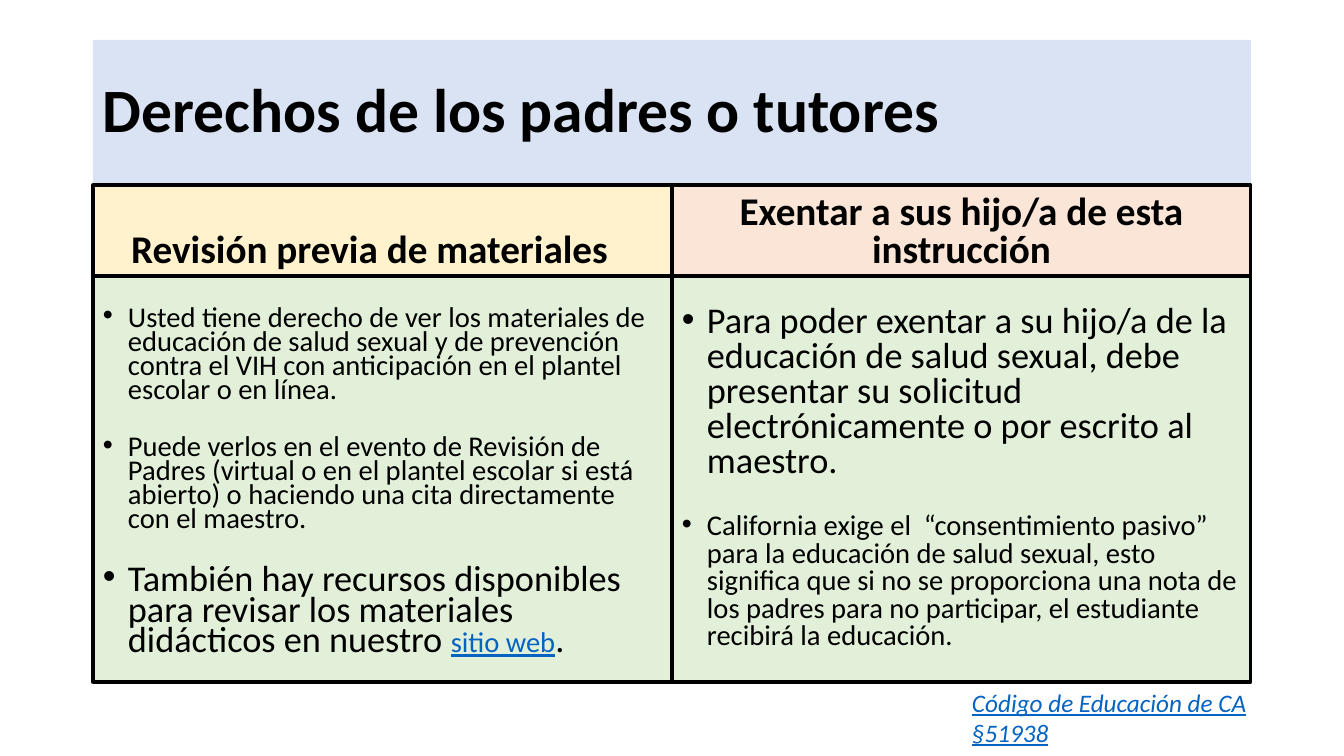
from pptx import Presentation
from pptx import util as u
from pptx.dml.color import RGBColor
from pptx.enum import shapes, text
from pptx.oxml.ns import qn
from lxml import etree

THEME = {
    "font": "Calibri", "ink": "000000", "link": "0563C1",
    "title_fill": "DAE3F3", "body_fill": "E2F0D9",
    "title": 44, "heading": 28, "large": 25.9, "small": 20.4, "note": 18,
    "border": 2.25,
}

TITLE = "Derechos de los padres o tutores"
# Each bullet: runs of (text, size name, is link), space before, space after
COLUMNS = [
    {
        "heading": "Revisión previa de materiales",
        "fill": "FFF2CC", "heading_spacing": 1.0, "right_inset": 36,
        "spacing": 0.7, "top_inset": 32,
        "bullets": [
            ([("Usted tiene derecho de ver los materiales de educación de salud "
               "sexual y de prevención contra el VIH con anticipación en el "
               "plantel escolar o en línea.", "small", False)], 0, 0),
            ([("Puede verlos en el evento de Revisión de Padres (virtual o en el "
               "plantel escolar si está abierto) o haciendo una cita "
               "directamente con el maestro.", "small", False)], 24, 0),
            ([("También hay recursos disponibles para revisar los materiales "
               "didácticos en nuestro ", "large", False),
              ("sitio web", "small", True), (".", "large", False)], 24, 0),
        ],
    },
    {
        "heading": "Exentar a sus hijo/a de esta instrucción",
        "fill": "FBE5D6", "heading_spacing": 0.8, "right_inset": 10,
        "spacing": 0.8, "top_inset": 30,
        "bullets": [
            ([("Para poder exentar a su hijo/a de la educación de salud sexual, "
               "debe presentar su solicitud electrónicamente o por escrito al "
               "maestro.", "large", False)], 0, 6),
            ([("California exige el  “consentimiento pasivo” para la educación "
               "de salud sexual, esto significa que si no se proporciona una "
               "nota de los padres para no participar, el estudiante recibirá "
               "la educación.", "small", False)], 18, 24),
        ],
    },
]
NOTE = "Código de Educación de CA §51938"

LEFT, COL_W = 93, 579
TITLE_Y, HEAD_Y, BODY_Y, BOTTOM = 40, 185, 276, 682
INDENT = 25


def px(n):
    return u.Emu(round(n * 914400 / 100.8))


def set_all(obj, values):
    for name, value in values.items():
        setattr(obj, name, value)


def set_frame(sp, anchor, top=5, right=10):
    tf = sp.text_frame
    set_all(tf, {"word_wrap": True, "vertical_anchor": anchor,
                 "margin_left": px(10), "margin_right": px(right),
                 "margin_top": px(top), "margin_bottom": px(5)})
    return tf


def add_box(slide, x, y, w, h, fill, border=True):
    sp = slide.shapes.add_shape(shapes.MSO_SHAPE.RECTANGLE, px(x), px(y), px(w), px(h))
    sp.shadow.inherit = False
    sp.fill.solid()
    sp.fill.fore_color.rgb = RGBColor.from_string(fill)
    if border:
        sp.line.color.rgb = RGBColor.from_string(THEME["ink"])
        sp.line.width = u.Pt(THEME["border"])
    else:
        sp.line.fill.background()
    return sp


def add_run(p, words, size, link=False, **style):
    r = p.add_run()
    r.text = words
    set_all(r.font, {"name": THEME["font"], "size": u.Pt(THEME[size]),
                     "underline": link, **style})
    r.font.color.rgb = RGBColor.from_string(THEME["link" if link else "ink"])


def add_bullet(p):
    pPr = p._p.get_or_add_pPr()
    pPr.set("marL", str(px(INDENT)))
    pPr.set("indent", str(-px(INDENT)))
    etree.SubElement(pPr, qn("a:buFont")).set("typeface", "Arial")
    etree.SubElement(pPr, qn("a:buChar")).set("char", "•")


def add_column(slide, x, col):
    sp = add_box(slide, x, HEAD_Y, COL_W, BODY_Y - HEAD_Y, col["fill"])
    p = set_frame(sp, text.MSO_ANCHOR.BOTTOM, right=col["right_inset"]).paragraphs[0]
    set_all(p, {"alignment": text.PP_ALIGN.CENTER,
                "line_spacing": col["heading_spacing"]})
    add_run(p, col["heading"], "heading", bold=True)

    sp = add_box(slide, x, BODY_Y, COL_W, BOTTOM - BODY_Y, THEME["body_fill"])
    tf = set_frame(sp, text.MSO_ANCHOR.TOP, top=col["top_inset"])
    for i, (runs, before, after) in enumerate(col["bullets"]):
        p = tf.add_paragraph() if i else tf.paragraphs[0]
        set_all(p, {"alignment": text.PP_ALIGN.LEFT, "line_spacing": col["spacing"],
                    "space_before": u.Pt(before), "space_after": u.Pt(after)})
        add_bullet(p)
        for words, size, link in runs:
            add_run(p, words, size, link)


def main():
    prs = Presentation()
    set_all(prs, {"slide_width": px(1344), "slide_height": px(756)})
    slide = prs.slides.add_slide(prs.slide_layouts[6])

    sp = add_box(slide, LEFT, TITLE_Y, COL_W * len(COLUMNS), HEAD_Y - TITLE_Y,
                 THEME["title_fill"], border=False)
    p = set_frame(sp, text.MSO_ANCHOR.MIDDLE).paragraphs[0]
    set_all(p, {"alignment": text.PP_ALIGN.LEFT, "line_spacing": 0.9})
    add_run(p, TITLE, "title", bold=True)

    for i, col in enumerate(COLUMNS):
        add_column(slide, LEFT + i * COL_W, col)

    sp = slide.shapes.add_textbox(px(962), px(BOTTOM), px(353), px(40))
    p = set_frame(sp, text.MSO_ANCHOR.TOP).paragraphs[0]
    add_run(p, NOTE, "note", link=True, italic=True)

    prs.save("out.pptx")


if __name__ == "__main__":
    main()
